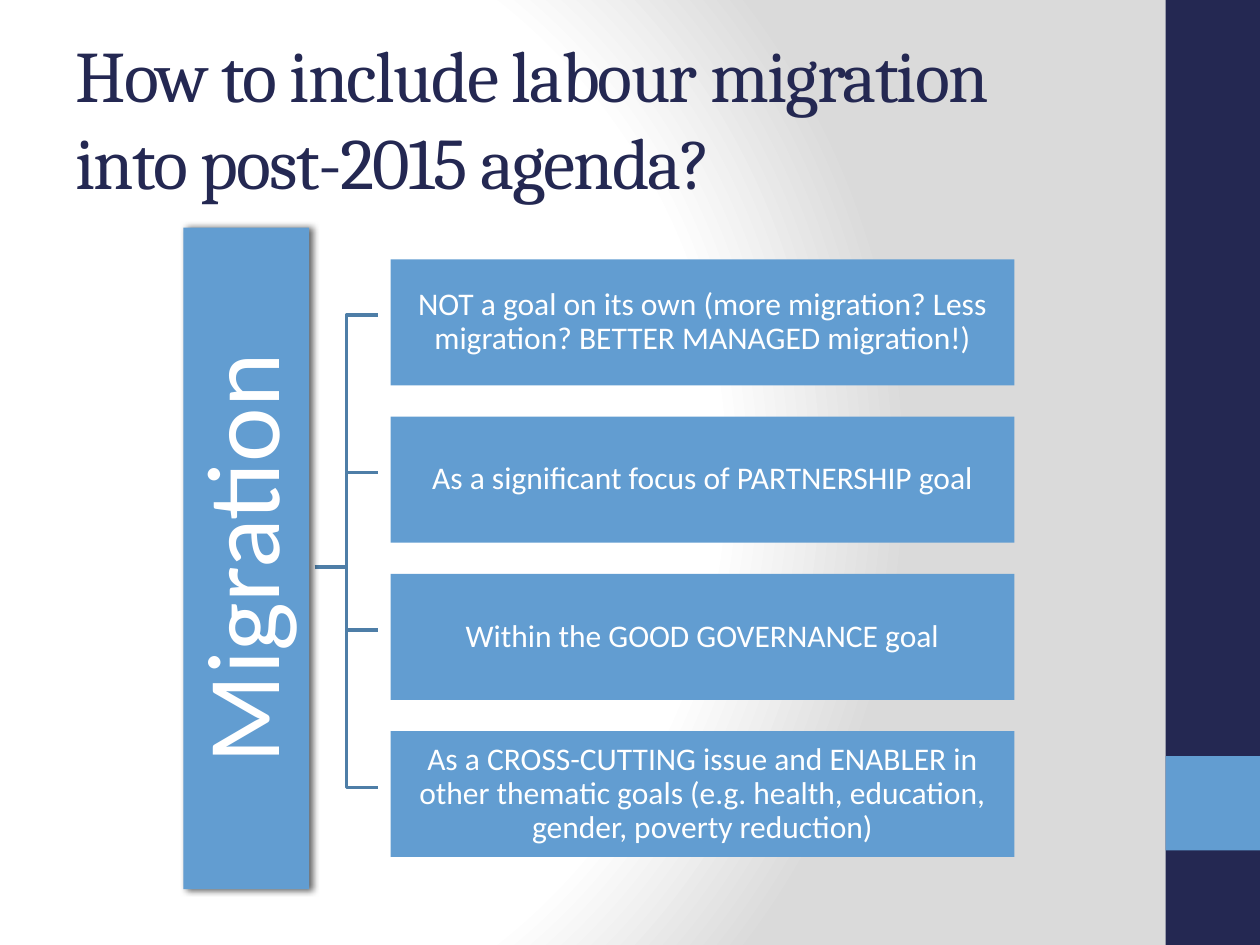
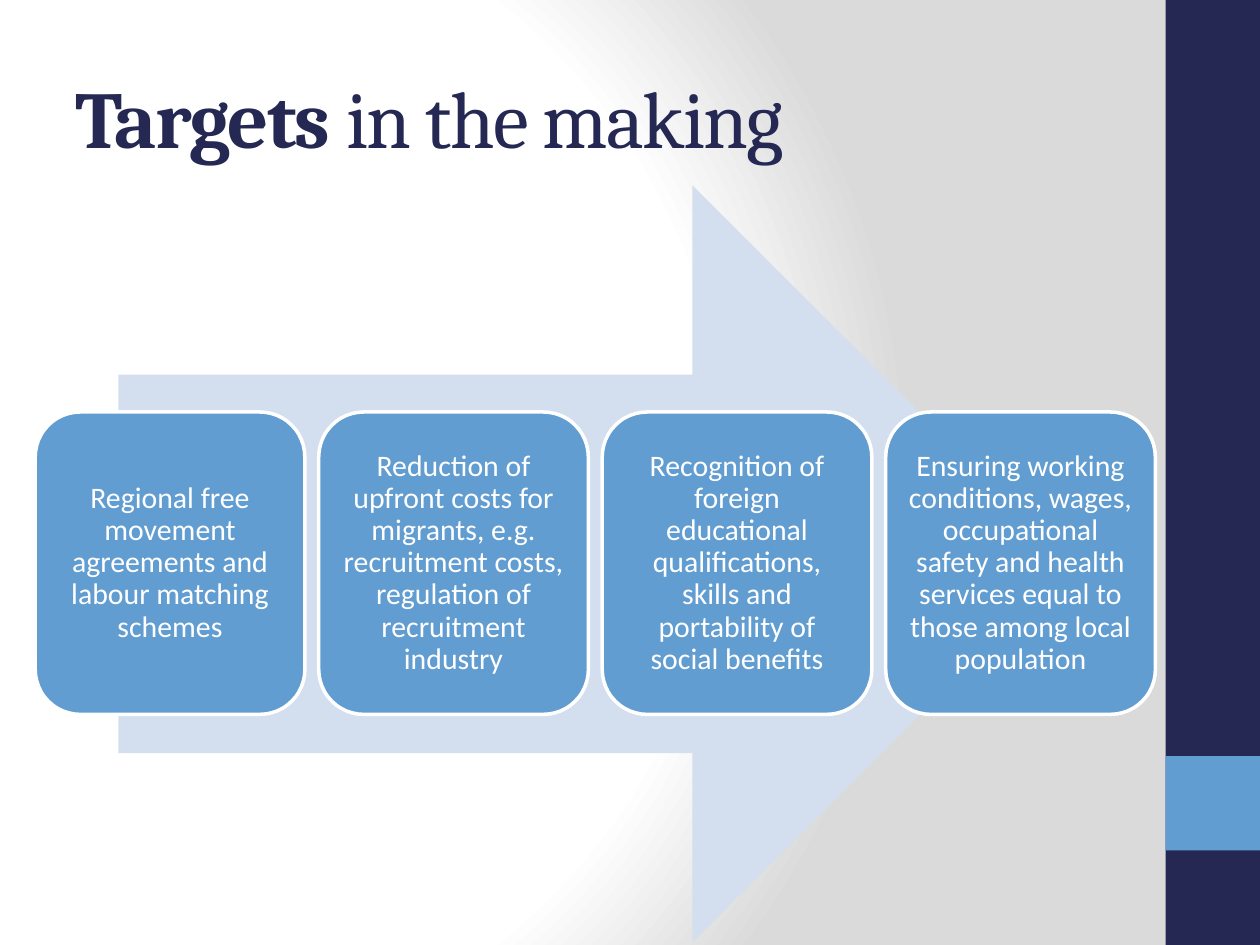
from pptx import Presentation, oxml
from pptx import util as u
from pptx.dml.color import RGBColor
from pptx.enum import shapes, text
from pptx.oxml import ns

NAVY = RGBColor(0x24, 0x28, 0x52)
BLUE = RGBColor(0x62, 0x9D, 0xD1)
STEEL = RGBColor(0x4E, 0x7E, 0xA7)
PALE = RGBColor(0xD3, 0xDF, 0xEE)
WHITE = RGBColor(0xFF, 0xFF, 0xFF)
GREY = RGBColor(0xDA, 0xDA, 0xDA)

CELL = u.Inches(0.25)  # one column or row of the grid
COLUMNS, ROWS = 40, 30
KIND = shapes.MSO_SHAPE


def cells(*counts):
    """Turn counts of grid cells into lengths."""
    return [round(count * CELL) for count in counts]


class Board:
    """Holds the deck's style and the slide being built."""

    title_font, body_font = "Cambria", "Calibri"

    def __init__(self):
        self.deck = Presentation()
        self.deck.slide_width, self.deck.slide_height = cells(COLUMNS, ROWS)
        self.slide = None
        self.set_background()

    def set_background(self):
        master = self.deck.slide_master
        master.background.fill.gradient()
        plain = master.element.find(".//" + ns.qn("a:gradFill"))
        stops = "".join(
            f'<a:gs pos="{share * 1000}"><a:srgbClr val="{color}"/></a:gs>'
            for share, color in [(0, WHITE), (75, WHITE), (100, GREY)])
        glow = oxml.parse_xml(
            f'<a:gradFill {ns.nsdecls("a")} rotWithShape="1">'
            f'<a:gsLst>{stops}</a:gsLst><a:path path="circle">'
            '<a:fillToRect l="20000" t="50000" r="100000" b="50000"/>'
            '</a:path></a:gradFill>')
        plain.getparent().replace(plain, glow)

    def start_slide(self, title, size):
        self.slide = self.deck.slides.add_slide(self.deck.slide_layouts[6])
        self.shape((37, 0, 3, ROWS), NAVY)
        self.shape((37, 24, 3, 3), BLUE)
        self.title(title, size)

    def title(self, spans, size):
        """Add a title from (wording, bold) pairs."""
        box = self.slide.shapes.add_textbox(*cells(2, 1.2, 33.32, 5))
        frame = box.text_frame
        frame.word_wrap = True
        frame.vertical_anchor = text.MSO_ANCHOR.MIDDLE
        para = frame.paragraphs[0]
        self.set_font(para, self.title_font, size, NAVY)
        for wording, bold in spans:
            span = para.add_run()
            span.text = wording
            span.font.bold = bold
            span.font._element.set("spc", "-100")

    def set_font(self, para, name, size, color):
        para.font.name = name
        para.font.size = u.Pt(size)
        para.font.color.rgb = color

    def shape(self, area, fill, kind=KIND.RECTANGLE, outline=None):
        shape = self.slide.shapes.add_shape(kind, *cells(*area))
        shape.shadow.inherit = False
        shape.fill.solid()
        shape.fill.fore_color.rgb = fill
        if outline is None:
            shape.line.fill.background()
        else:
            shape.line.color.rgb = outline
            shape.line.width = u.Pt(2)
        return shape

    def label(self, shape, wording, size, inset):
        """Write centred white text in a shape; inset is in cells."""
        frame = shape.text_frame
        frame.word_wrap = True
        frame.vertical_anchor = text.MSO_ANCHOR.MIDDLE
        frame.margin_left = frame.margin_right = cells(inset)[0]
        frame.margin_top = frame.margin_bottom = cells(inset)[0]
        para = frame.paragraphs[0]
        para.text = wording
        para.alignment = text.PP_ALIGN.CENTER
        para.line_spacing = 0.9
        self.set_font(para, self.body_font, size, WHITE)

    def drop_shadow(self, shape):
        effects = shape._element.spPr.find(ns.qn("a:effectLst"))
        effects.append(oxml.parse_xml(
            f'<a:outerShdw {ns.nsdecls("a")} blurRad="{u.Pt(4)}" '
            f'dist="{u.Pt(2)}" dir="0" rotWithShape="0">'
            '<a:srgbClr val="000000"><a:alpha val="60000"/></a:srgbClr>'
            '</a:outerShdw>'))

    def branch(self, start, end):
        """Draw a stepped line that turns halfway between two points."""
        middle = (start[0] + end[0]) / 2
        builder = self.slide.shapes.build_freeform(*start, scale=CELL)
        builder.add_line_segments(
            [(middle, start[1]), (middle, end[1]), end], close=False)
        line = builder.convert_to_shape()
        line.shadow.inherit = False
        line.fill.background()
        line.line.color.rgb = STEEL
        line.line.width = u.Pt(2)


def add_agenda(board):
    board.start_slide(
        [("How to include labour migration into post-2015 agenda?", False)], 41.4)
    options = [
        "NOT a goal on its own (more migration? Less migration? "
        "BETTER MANAGED migration!)",
        "As a significant focus of PARTNERSHIP goal",
        "Within the GOOD GOVERNANCE goal",
        "As a CROSS-CUTTING issue and ENABLER in other thematic goals "
        "(e.g. health, education, gender, poverty reduction)",
    ]
    left, height, pitch = 12.4, 4, 4.99
    tops = [8.24 + pitch * index for index in range(len(options))]
    center = (tops[0] + tops[-1] + height) / 2
    for top in tops:
        board.branch((9.8, center), (left, top + height / 2))

    length = 21
    root = board.shape((7.82 - length / 2, center - height / 2, length, height), BLUE)
    root.rotation = 270
    board.drop_shadow(root)
    board.label(root, "Migration", 59, 0.16)
    for top, option in zip(tops, options):
        box = board.shape((left, top, 19.8, height), BLUE)
        board.label(box, option, 18, 0.04)


def add_targets(board):
    board.start_slide([("Targets", True), (" in the making", False)], 46)
    board.shape((3.76, 5.88, 30.24, 24.04), PALE, KIND.RIGHT_ARROW)
    targets = [
        "Regional free movement agreements and labour matching schemes",
        "Reduction of upfront costs for migrants, e.g. recruitment costs, "
        "regulation of recruitment industry",
        "Recognition of foreign educational qualifications, skills and "
        "portability of social benefits",
        "Ensuring working conditions, wages, occupational safety and health "
        "services equal to those among local population",
    ]
    for index, target in enumerate(targets):
        card = board.shape((1.12 + 9 * index, 13.08, 8.56, 9.6), BLUE,
                           KIND.ROUNDED_RECTANGLE, WHITE)
        board.label(card, target, 17, 0.28)


def main():
    board = Board()
    add_agenda(board)
    add_targets(board)
    board.deck.save("out.pptx")


if __name__ == "__main__":
    main()
